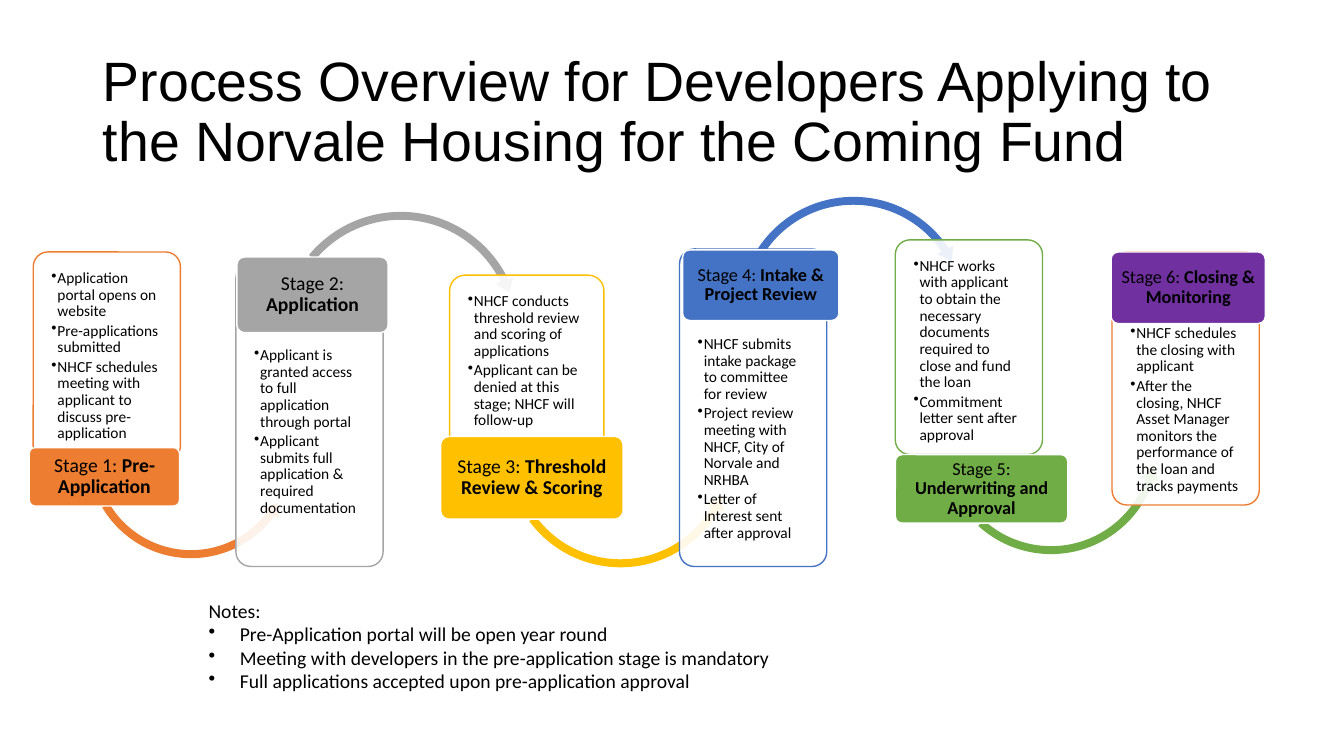
import pptx
import pptx.util
import pptx.dml.color
import pptx.enum.shapes
import pptx.enum.text
import pptx.oxml
import pptx.oxml.ns

Inches = pptx.util.Inches
Shapes = pptx.enum.shapes.MSO_SHAPE
Align = pptx.enum.text.PP_ALIGN
Anchor = pptx.enum.text.MSO_ANCHOR

UP = Shapes.CIRCULAR_ARROW
DOWN = Shapes.LEFT_CIRCULAR_ARROW

STAGES = [
    dict(name="Pre-Application", size=14, color="ED7D31", edge="ED7D31",
         card=(0.33, 2.5, 1.46, 2.07), label=(0.29, 4.44, 1.49, 0.58), label_on_top=False,
         steps=["Application portal opens on website", "Pre-applications submitted",
                "NHCF schedules meeting with applicant to discuss pre-application"],
         arrow=(DOWN, 0.82, 3.44, 2.15, (0.037, 4.587, 21.771, 89.674, 0.043))),
    dict(name="Application", size=14, color="A5A5A5", edge="A5A5A5",
         card=(2.34, 2.61, 1.46, 3.01), label=(2.35, 2.55, 1.5, 0.75), label_on_top=True,
         steps=["Applicant is granted access to full application through portal",
                "Applicant submits full application & required documentation"],
         arrow=(UP, 2.74, 2.05, 2.47, (0.032, 3.936, 200.394, 131.84, 0.037))),
    dict(name="Threshold Review & Scoring", size=14, color="FFC000", edge="FFC000",
         card=(4.46, 2.73, 1.53, 2.08), label=(4.37, 4.33, 1.81, 0.82), label_on_top=False,
         steps=["NHCF conducts threshold review and scoring of applications",
                "Applicant can be denied at this stage; NHCF will follow-up"],
         arrow=(DOWN, 4.98, 3.33, 2.35, (0.034, 4.163, 17.853, 86.179, 0.039))),
    dict(name="Intake & Project Review", size=13, color="4472C4", edge="4472C4",
         card=(6.74, 2.47, 1.46, 3.15), label=(6.77, 2.48, 1.55, 0.7), label_on_top=True,
         steps=["NHCF submits intake package to committee for review",
                "Project review meeting with NHCF, City of Norvale and NRHBA",
                "Letter of Interest sent after approval"],
         arrow=(UP, 7.28, 1.9, 2.37, (0.033, 4.118, 195.779, 127.407, 0.039))),
    dict(name="Underwriting and Approval", size=13, color="70AD47", edge="70AD47",
         card=(8.88, 2.38, 1.46, 2.13), label=(8.88, 4.51, 1.71, 0.68), label_on_top=False,
         steps=["NHCF works with applicant to obtain the necessary documents required "
                "to close and fund the loan", "Commitment letter sent after approval"],
         arrow=(DOWN, 9.3, 3.3, 2.25, (0.035, 4.36, 11.275, 79.405, 0.041))),
    dict(name="Closing & Monitoring", size=13, color="7030A0", edge="ED7D31",
         card=(11.03, 2.5, 1.46, 2.51), label=(11.02, 2.5, 1.53, 0.71), label_on_top=True,
         steps=["NHCF schedules the closing with applicant",
                "After the closing, NHCF Asset Manager monitors the performance of the "
                "loan and tracks payments"],
         arrow=None),
]

NOTES = ["Pre-Application portal will be open year round",
         "Meeting with developers in the pre-application stage is mandatory",
         "Full applications accepted upon pre-application approval"]


def rgb(color):
    return pptx.dml.color.RGBColor.from_string(color)


def inches(box):
    return [Inches(length) for length in box]


def write(para, text, size=14, font="Calibri", bold=False, align=Align.LEFT,
          spacing=1.0, after=0, indent=0):
    para.alignment = align
    para.line_spacing = spacing
    para.space_before = pptx.util.Pt(0)
    para.space_after = pptx.util.Pt(after)
    span = para.add_run()
    span.text = text
    span.font.size = pptx.util.Pt(size)
    span.font.name = font
    span.font.bold = bold
    span.font.color.rgb = rgb("000000")
    if indent:
        properties = para._p.get_or_add_pPr()
        properties.set("marL", str(Inches(indent)))
        properties.set("indent", str(-Inches(indent)))
        bullet = pptx.oxml.parse_xml(
            f'<a:buChar {pptx.oxml.ns.nsdecls("a")} char="•"/>')
        properties.append(bullet)


def next_para(frame):
    first = frame.paragraphs[0]
    return frame.add_paragraph() if first.runs else first


def text_frame(page, box, across=0.1, down=0.05, anchor=Anchor.TOP):
    frame = page.shapes.add_textbox(*inches(box)).text_frame
    frame.word_wrap = True
    frame.vertical_anchor = anchor
    frame.margin_left = frame.margin_right = Inches(across)
    frame.margin_top = frame.margin_bottom = Inches(down)
    return frame


def add_shape(page, kind, box, fill, line=None, adjustments=(), opacity=None):
    shape = page.shapes.add_shape(kind, *inches(box))
    shape.shadow.inherit = False
    shape.fill.solid()
    shape.fill.fore_color.rgb = rgb(fill)
    if opacity:
        color = shape.fill._xPr.find(".//" + pptx.oxml.ns.qn("a:srgbClr"))
        color.append(pptx.oxml.parse_xml(
            f'<a:alpha {pptx.oxml.ns.nsdecls("a")} val="{opacity * 1000}"/>'))
    if line:
        shape.line.color.rgb = rgb(line)
        shape.line.width = pptx.util.Pt(1)
    else:
        shape.line.fill.background()
    for index, value in enumerate(adjustments):
        shape.adjustments[index] = value


def add_card(page, box, edge, steps, label_on_top):
    left, top, width, height = box
    add_shape(page, Shapes.ROUNDED_RECTANGLE, box, "FFFFFF", edge, [0.1], opacity=90)
    text_height = height * 11 / 14 - 0.09
    text_top = top + height - 0.04 - text_height if label_on_top else top + 0.04
    frame = text_frame(page, (left + 0.04, text_top, width - 0.08, text_height), 0.14, 0.14)
    for step in steps:
        write(next_para(frame), step, size=11, spacing=0.9, after=2, indent=0.06)


def add_label(page, box, number, name, size, color):
    left, top, width, height = box
    add_shape(page, Shapes.ROUNDED_RECTANGLE, box, color, "FFFFFF", [0.1])
    inner = (left + 0.02, top + 0.02, width - 0.04, height - 0.04)
    para = text_frame(page, inner, 0.03, 0.02, Anchor.MIDDLE).paragraphs[0]
    write(para, f"Stage {number}: ", size=size, align=Align.CENTER, spacing=0.9)
    write(para, name, size=size, bold=True, align=Align.CENTER, spacing=0.9)


def add_stage(page, number, stage):
    add_card(page, stage["card"], stage["edge"], stage["steps"], stage["label_on_top"])
    if stage["arrow"]:
        kind, left, top, side, adjustments = stage["arrow"]
        add_shape(page, kind, (left, top, side, side), stage["color"], adjustments=adjustments)
    add_label(page, stage["label"], number, stage["name"], stage["size"], stage["color"])


def add_title(page, box):
    title = page.shapes.title
    title.left, title.top, title.width, title.height = inches(box)
    frame = title.text_frame
    frame.auto_size = pptx.enum.text.MSO_AUTO_SIZE.NONE
    frame.vertical_anchor = Anchor.MIDDLE
    write(frame.paragraphs[0],
          "Process Overview for Developers Applying to the Norvale Housing for the Coming Fund",
          size=39.6, font="Arial", spacing=0.9)


def add_notes(page, box):
    frame = text_frame(page, box)
    write(next_para(frame), "Notes:")
    for note in NOTES:
        write(next_para(frame), note, indent=0.31)


def main():
    deck = pptx.Presentation()
    deck.slide_width, deck.slide_height = inches((13.33, 7.5))
    page = deck.slides.add_slide(deck.slide_layouts[5])
    add_title(page, (0.92, 0.4, 11.5, 1.45))
    for number, stage in enumerate(STAGES, 1):
        add_stage(page, number, stage)
    add_notes(page, (1.97, 5.89, 7.59, 1.04))
    deck.save("out.pptx")


if __name__ == "__main__":
    main()
